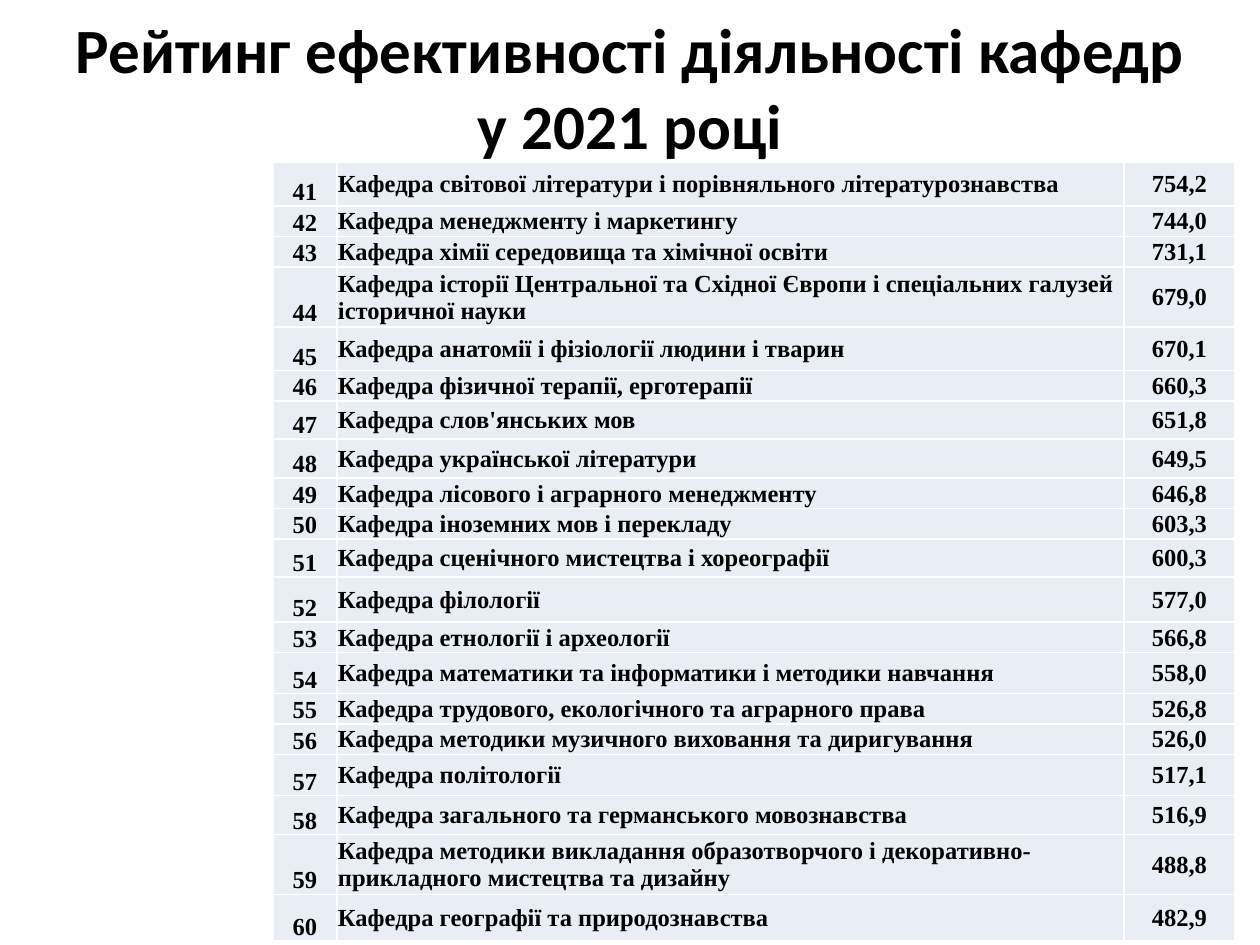
import pptx
import pptx.util
import pptx.dml.color
import pptx.enum.text
import pptx.oxml

PX = 914400 / 126
HUES = {"ink": "000000", "cell": "E9EDF4", "rule": "FFFFFF"}
ALIGN = pptx.enum.text.PP_ALIGN
ANCHOR = pptx.enum.text.MSO_ANCHOR
COLS = [64, 787, 111]
STYLES = [
    (ALIGN.CENTER, ANCHOR.BOTTOM),
    (ALIGN.LEFT, ANCHOR.MIDDLE),
    (ALIGN.CENTER, ANCHOR.MIDDLE),
]
FIRST = 41
RANKS = [
    ("Кафедра світової літератури і порівняльного літературознавства", "754,2", 44),
    ("Кафедра менеджменту і маркетингу", "744,0", 30),
    ("Кафедра хімії середовища та хімічної освіти", "731,1", 30),
    ("Кафедра історії Центральної та Східної Європи і спеціальних галузей історичної науки", "679,0", 30),
    ("Кафедра анатомії і фізіології людини і тварин", "670,1", 44),
    ("Кафедра фізичної терапії, ерготерапії", "660,3", 30),
    ("Кафедра слов'янських мов", "651,8", 38),
    ("Кафедра української літератури", "649,5", 39),
    ("Кафедра лісового і аграрного менеджменту", "646,8", 30),
    ("Кафедра іноземних мов і перекладу", "603,3", 30),
    ("Кафедра сценічного мистецтва і хореографії", "600,3", 38),
    ("Кафедра філології", "577,0", 45),
    ("Кафедра етнології і археології", "566,8", 30),
    ("Кафедра математики та інформатики і методики навчання", "558,0", 41),
    ("Кафедра трудового, екологічного та аграрного права", "526,8", 30),
    ("Кафедра методики музичного виховання та диригування", "526,0", 30),
    ("Кафедра політології", "517,1", 41),
    ("Кафедра загального та германського мовознавства", "516,9", 39),
    ("Кафедра методики викладання образотворчого і декоративно-прикладного мистецтва та дизайну", "488,8", 43),
    ("Кафедра географії та природознавства", "482,9", 47),
]


def emu(px):
    """Turn px into EMU."""
    return pptx.util.Emu(round(px * PX))


def rgb(name):
    """Look up a colour by name."""
    return pptx.dml.color.RGBColor.from_string(HUES[name])


def write(frame, text, face, size, align):
    """Put one bold paragraph into a text frame."""
    frame.word_wrap = True
    para = frame.paragraphs[0]
    para.text = text
    para.alignment = align
    para.font.name = face
    para.font.size = pptx.util.Pt(size)
    para.font.bold = True
    para.font.color.rgb = rgb("ink")


def edge(cell):
    """Draw thin rules on all four sides of a cell."""
    props = cell._tc.get_or_add_tcPr()
    for spot, side in enumerate(("lnL", "lnR", "lnT", "lnB")):
        props.insert(spot, pptx.oxml.parse_xml(
            f'<a:{side} xmlns:a="http://schemas.openxmlformats.org/drawingml/2006/main" w="12700">'
            f'<a:solidFill><a:srgbClr val="{HUES["rule"]}"/></a:solidFill></a:{side}>'))


def title(slide, left, top, width, height):
    """Place the slide heading in its box."""
    box = slide.shapes.add_textbox(*map(emu, (left, top, width, height)))
    box.text_frame.vertical_anchor = ANCHOR.MIDDLE
    write(box.text_frame, "Рейтинг ефективності діяльності кафедр у 2021 році",
          "Calibri", 36, ALIGN.CENTER)


def fill(cell, text, align, anchor):
    """Write and style one table cell."""
    cell.margin_left = cell.margin_top = cell.margin_right = emu(1)
    cell.margin_bottom = 0
    cell.vertical_anchor = anchor
    cell.fill.solid()
    cell.fill.fore_color.rgb = rgb("cell")
    write(cell.text_frame, text, "Times New Roman", 14, align)
    edge(cell)


def ranking(slide, left, top):
    """Place the table of departments from its top left corner."""
    width, height = sum(COLS), sum(rank[2] for rank in RANKS)
    grid = slide.shapes.add_table(
        len(RANKS), len(COLS), *map(emu, (left, top, width, height))).table
    grid.first_row = grid.horz_banding = False
    for col, size in zip(grid.columns, COLS):
        col.width = emu(size)
    for place, (row, (name, score, tall)) in enumerate(zip(grid.rows, RANKS), FIRST):
        row.height = emu(tall)
        for cell, text, style in zip(row.cells, (str(place), name, score), STYLES):
            fill(cell, text, *style)


def main():
    """Build and save the slide."""
    deck = pptx.Presentation()
    deck.slide_width, deck.slide_height = emu(1260), emu(945)
    slide = deck.slides.add_slide(deck.slide_layouts[6])
    title(slide, 63, 38, 1134, 97)
    ranking(slide, 273, 162)
    deck.save("out.pptx")


if __name__ == "__main__":
    main()
